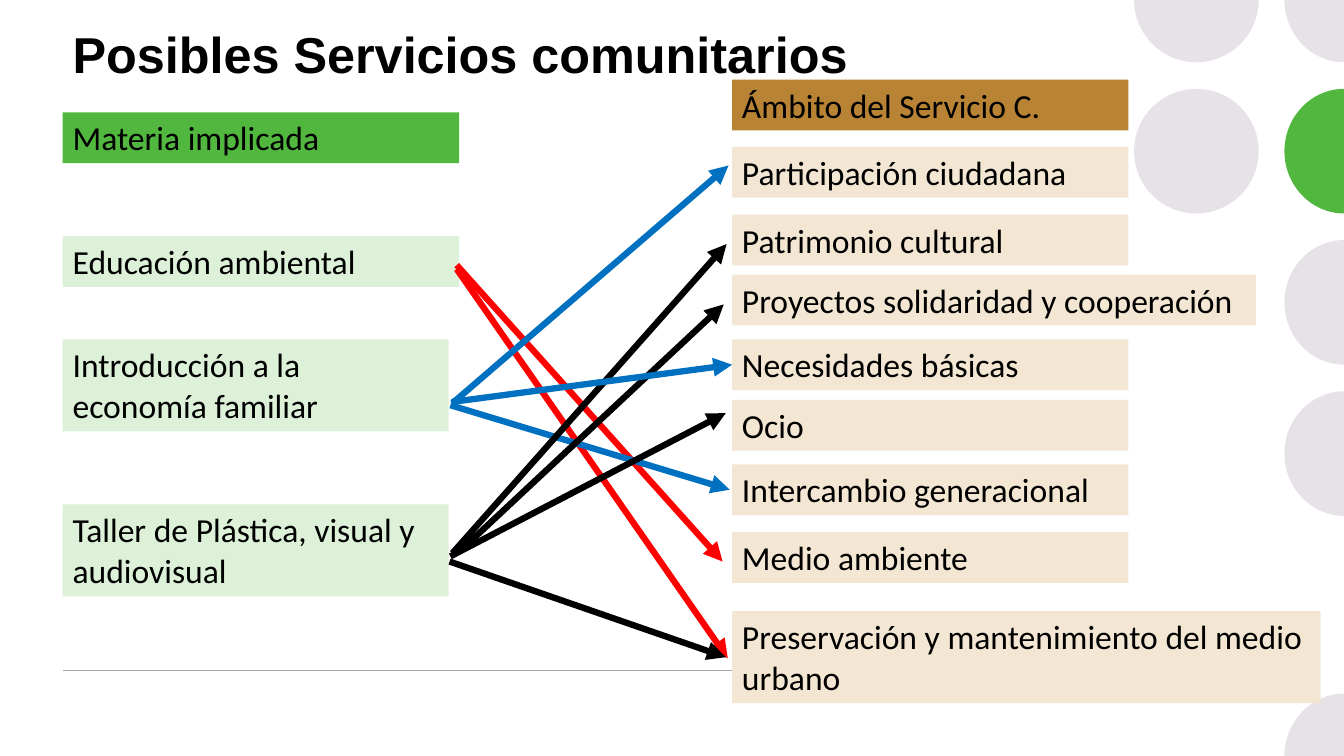
from lxml.etree import SubElement
from pptx import Presentation
from pptx.dml.color import RGBColor
from pptx.enum.shapes import MSO_CONNECTOR as LINE, MSO_SHAPE as SHAPE
from pptx.enum.text import MSO_ANCHOR as ANCHOR, MSO_AUTO_SIZE as FIT, PP_ALIGN as ALIGN
from pptx.oxml.ns import qn
from pptx.util import Cm, Pt

WIDTH, HEIGHT = 33.87, 19.05
COLOURS = {
    "black": "000000", "red": "FF0000", "blue": "0070C0", "grey": "A6A6A6",
    "lilac": "E7E2E8", "green": "51B73F", "mint": "DCF1D8",
    "brown": "B88334", "sand": "F3E7D4",
}
RADIUS, CIRCLE_STEP = 1.57, 3.81
ARC_PULL = 0.55  # share of a quarter arc's side taken by its Bézier handle
CIRCLE_LEFT, CIRCLE_RIGHT = 28.58, 31.72
EDGE_LEFT = 32.37
SUBJECT_LEFT, FIELD_LEFT = 1.58, 18.45
ONE_LINE, TWO_LINES = 1.28, 2.32
SUBJECTS = [  # text, top, width, height, colour
    ("Materia implicada", 2.83, 9.99, ONE_LINE, "green"),
    ("Educación ambiental", 5.95, 9.99, ONE_LINE, "mint"),
    ("Introducción a la economía familiar", 8.55, 9.73, TWO_LINES, "mint"),
    ("Taller de Plástica, visual y audiovisual", 12.71, 9.73, TWO_LINES, "mint"),
]
BASIC_NEEDS = "Necesidades básicas"
FIELDS = [
    ("Ámbito del Servicio C.", 2.01, 9.99, ONE_LINE, "brown"),
    ("Participación ciudadana", 3.7, 9.99, ONE_LINE, "sand"),
    ("Patrimonio cultural", 5.41, 9.99, ONE_LINE, "sand"),
    ("Proyectos solidaridad y cooperación", 6.92, 13.2, ONE_LINE, "sand"),
    (BASIC_NEEDS, 8.55, 9.99, ONE_LINE, "sand"),
    ("Ocio", 10.08, 9.99, ONE_LINE, "sand"),
    ("Intercambio generacional", 11.7, 9.99, ONE_LINE, "sand"),
    ("Medio ambiente", 13.41, 9.99, ONE_LINE, "sand"),
    ("Preservación y mantenimiento del medio urbano", 15.4, 14.83, TWO_LINES, "sand"),
]
ARROWS = [  # colour, start, end
    ("red", (11.51, 6.68), (18.21, 14.15)),
    ("red", (11.51, 6.78), (18.34, 16.59)),
    ("blue", (11.4, 10.16), (18.36, 4.17)),
    ("blue", (11.35, 10.21), (18.39, 12.34)),
    ("black", (11.4, 13.94), (18.31, 6.15)),
    ("black", (11.35, 14.02), (18.29, 10.41)),
    ("black", (11.33, 14.15), (18.29, 16.56)),
    ("black", (11.61, 13.87), (18.24, 7.67)),
]


def colour_of(name):
    return RGBColor.from_string(COLOURS[name])


def paint(shape, colour):
    shape.shadow.inherit = False
    shape.fill.solid()
    shape.fill.fore_color.rgb = colour_of(colour)
    shape.line.fill.background()


def write(shape, text, *, font="Calibri", size=24, bold=False,
          anchor=ANCHOR.TOP, fit=FIT.SHAPE_TO_FIT_TEXT):
    frame = shape.text_frame
    frame.word_wrap = True
    frame.auto_size = fit
    frame.vertical_anchor = anchor
    para = frame.paragraphs[0]
    para.alignment = ALIGN.LEFT
    span = para.add_run()
    span.text = text
    span.font.name = font
    span.font.size = Pt(size)
    span.font.bold = bold
    span.font.color.rgb = colour_of("black")


def quarter_arc(start, corner, end):
    """Return the two Bézier handles and the end of an arc that rounds a corner."""
    handles = [tuple(p + ARC_PULL * (c - p) for p, c in zip(point, corner))
               for point in (start, end)]
    return handles + [end]


def add_cut_circle(page, colour, start, *arcs, corners=()):
    """Draw part of a circle: arcs (corner, end) from start, then straight corners."""
    points, here = [], start
    for corner, end in arcs:
        points += quarter_arc(here, corner, end)
        here = end
    outline = page.shapes.build_freeform(*map(Cm, start))
    outline.add_line_segments([tuple(map(Cm, point)) for point in points + list(corners)])
    shape = outline.convert_to_shape()
    sides = list(shape._element.iter(qn("a:lnTo")))[:len(points)]
    for first, second, last in zip(sides[::3], sides[1::3], sides[2::3]):
        curve = first.makeelement(qn("a:cubicBezTo"))
        first.addprevious(curve)
        for side in (first, second, last):
            curve.append(side[0])
            side.getparent().remove(side)
    paint(shape, colour)


def add_circles(page):
    left, right = CIRCLE_LEFT, CIRCLE_RIGHT
    middle = (left + right) / 2
    side = Cm(2 * RADIUS)
    circle = page.shapes.add_shape(SHAPE.OVAL, Cm(left), Cm(CIRCLE_STEP - RADIUS), side, side)
    paint(circle, "lilac")
    add_cut_circle(page, "lilac", (right, 0),
                   ((right, RADIUS), (middle, RADIUS)), ((left, RADIUS), (left, 0)))
    for row, colour in enumerate(("green", "lilac", "lilac"), start=1):
        centre = row * CIRCLE_STEP
        top, bottom = centre - RADIUS, centre + RADIUS
        add_cut_circle(page, colour, (WIDTH, top),
                       ((EDGE_LEFT, top), (EDGE_LEFT, centre)),
                       ((EDGE_LEFT, bottom), (WIDTH, bottom)))
    for edge, rim in ((0, RADIUS), (HEIGHT, HEIGHT - RADIUS)):
        add_cut_circle(page, "lilac", (WIDTH, rim),
                       ((EDGE_LEFT, rim), (EDGE_LEFT, edge)), corners=[(WIDTH, edge)])


def add_label(page, left, text, top, width, height, colour):
    box = page.shapes.add_shape(SHAPE.RECTANGLE, Cm(left), Cm(top), Cm(width), Cm(height))
    paint(box, colour)
    write(box, text)
    return box


def add_line(page, colour, start, end, weight=4.5, arrow=True):
    line = page.shapes.add_connector(LINE.STRAIGHT, *map(Cm, start + end))
    line.line.color.rgb = colour_of(colour)
    line.line.width = Pt(weight)
    if arrow:
        SubElement(line.line._get_or_add_ln(), qn("a:tailEnd"), type="triangle")
    SubElement(line._element.spPr, qn("a:effectLst"))
    return line


def main():
    deck = Presentation()
    deck.slide_width, deck.slide_height = Cm(WIDTH), Cm(HEIGHT)
    page = deck.slides.add_slide(deck.slide_layouts[6])

    add_circles(page)
    add_line(page, "grey", (SUBJECT_LEFT, 16.9), (32.28, 16.9), weight=1, arrow=False)

    title = page.shapes.add_textbox(Cm(SUBJECT_LEFT), Cm(0.41), Cm(20.37), Cm(1.85))
    write(title, "Posibles Servicios comunitarios", font="Arial", size=36,
          bold=True, anchor=ANCHOR.MIDDLE, fit=FIT.NONE)

    for subject in SUBJECTS:
        add_label(page, SUBJECT_LEFT, *subject)
    fields = {field[0]: add_label(page, FIELD_LEFT, *field) for field in FIELDS}

    for arrow in ARROWS:
        add_line(page, *arrow)
    needs_arrow = add_line(page, "blue", (11.38, 10.13), (FIELD_LEFT, 9.19))
    needs_arrow.end_connect(fields[BASIC_NEEDS], 1)

    deck.save("out.pptx")


if __name__ == "__main__":
    main()
